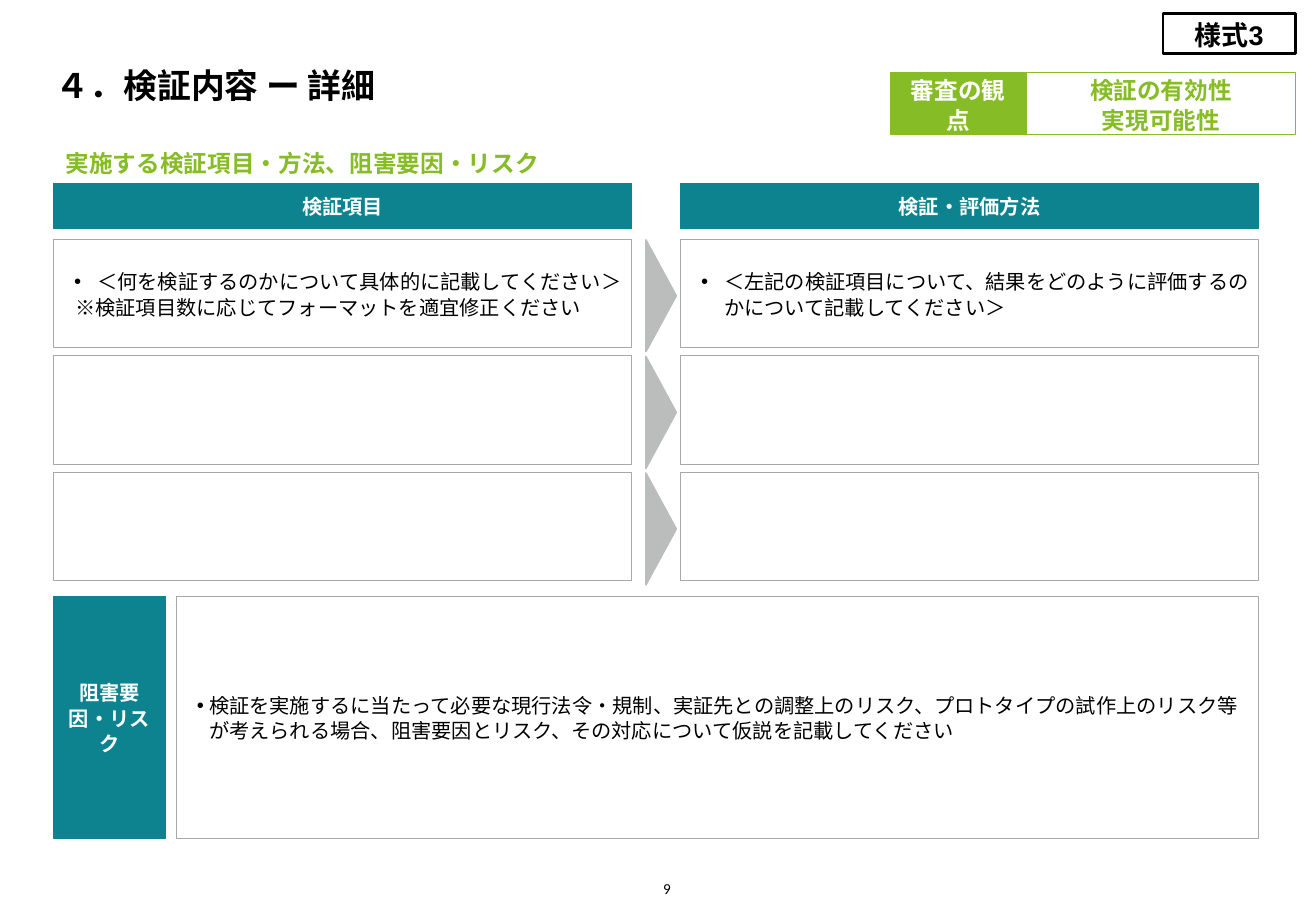
from dataclasses import dataclass
from typing import Optional

from lxml import etree
from pptx import Presentation
from pptx.dml.color import RGBColor
from pptx.enum.shapes import MSO_SHAPE
from pptx.enum.text import MSO_ANCHOR, MSO_AUTO_SIZE, PP_ALIGN
from pptx.oxml.ns import qn
from pptx.util import Inches, Pt

RECTANGLE, TRIANGLE = MSO_SHAPE.RECTANGLE, MSO_SHAPE.ISOSCELES_TRIANGLE
LEFT, CENTER, RIGHT = PP_ALIGN.LEFT, PP_ALIGN.CENTER, PP_ALIGN.RIGHT
MIDDLE, BOTTOM = MSO_ANCHOR.MIDDLE, MSO_ANCHOR.BOTTOM

BLACK = RGBColor(0x00, 0x00, 0x00)
WHITE = RGBColor(0xFF, 0xFF, 0xFF)
GREEN = RGBColor(0x86, 0xBC, 0x25)
TEAL = RGBColor(0x0D, 0x83, 0x90)
BORDER_GRAY = RGBColor(0xA7, 0xA8, 0xAA)
ARROW_GRAY = RGBColor(0xBB, 0xBC, 0xBC)

# Grid, in inches
LEFT_COLUMN, RIGHT_COLUMN, COLUMN_WIDTH = 0.44, 5.6, 4.76
FIRST_ROW, ROW_PITCH, ROW_HEIGHT = 1.97, 0.96, 0.89
RISK_TOP, RISK_HEIGHT = 4.91, 1.99


@dataclass
class Line:
    text: str
    size: float = 12
    color: RGBColor = BLACK
    bold: bool = False
    align: PP_ALIGN = LEFT
    font: str = "Arial"
    margin: float = 0
    hanging: float = 0
    spacing: Optional[float] = 1.06


@dataclass
class Box:
    left: float
    top: float
    width: float
    height: float
    fill: RGBColor
    border: RGBColor
    lines: tuple[Line, ...] = ()
    border_width: float = 0.5


def write_lines(frame, lines: tuple[Line, ...]) -> None:
    for index, line in enumerate(lines):
        paragraph = frame.paragraphs[0] if index == 0 else frame.add_paragraph()
        paragraph.text = line.text
        paragraph.alignment = line.align
        if line.spacing:
            paragraph.line_spacing = line.spacing
        properties = paragraph._p.get_or_add_pPr()
        if line.margin:
            properties.set("marL", str(Inches(line.margin)))
            properties.set("indent", str(-Inches(line.hanging)))
        if line.hanging:
            etree.SubElement(properties, qn("a:buFont")).set("typeface", "Arial")
            etree.SubElement(properties, qn("a:buChar")).set("char", "•")
        paragraph.font.name = line.font
        paragraph.font.size = Pt(line.size)
        paragraph.font.bold = line.bold
        paragraph.font.color.rgb = line.color


def set_frame(frame, anchor: MSO_ANCHOR, wrap: bool, left: float = 0, other: float = 0) -> None:
    frame.auto_size = MSO_AUTO_SIZE.NONE
    frame.word_wrap = wrap
    frame.vertical_anchor = anchor
    frame.margin_left = Inches(left)
    frame.margin_top = frame.margin_right = frame.margin_bottom = Inches(other)


def add_box(slide, box: Box, kind: MSO_SHAPE = RECTANGLE):
    shape = slide.shapes.add_shape(
        kind, Inches(box.left), Inches(box.top), Inches(box.width), Inches(box.height))
    shape.shadow.inherit = False
    shape.fill.solid()
    shape.fill.fore_color.rgb = box.fill
    shape.line.color.rgb = box.border
    shape.line.width = Pt(box.border_width)
    set_frame(shape.text_frame, MIDDLE, True, 0.08, 0.08)
    write_lines(shape.text_frame, box.lines)
    return shape


def add_label(slide, left: float, top: float, width: float, height: float,
              line: Line, anchor: MSO_ANCHOR, inset: float = 0) -> None:
    label = slide.shapes.add_textbox(Inches(left), Inches(top), Inches(width), Inches(height))
    set_frame(label.text_frame, anchor, False, inset)
    write_lines(label.text_frame, (line,))


def heading(text: str, color: RGBColor = WHITE, size: float = 12) -> Line:
    return Line(text, size, color, True, CENTER)


def add_title(slide) -> None:
    title = slide.shapes.title
    title.left, title.top = Inches(0.46), Inches(0.2)
    title.width, title.height = Inches(9.92), Inches(0.67)
    set_frame(title.text_frame, BOTTOM, True)
    write_lines(title.text_frame, (
        Line("４．検証内容 ー 詳細", 20, bold=True, font="Calibri", spacing=None),))


def main() -> None:
    presentation = Presentation()
    presentation.slide_width, presentation.slide_height = Inches(10.83), Inches(7.5)
    slide = presentation.slides.add_slide(presentation.slide_layouts[5])

    # Title, subtitle and page number
    add_title(slide)
    add_label(slide, 0.46, 1.11, 4.76, 0.47,
              Line("実施する検証項目・方法、阻害要因・リスク", 14, GREEN, True,
                   font="Calibri", spacing=None), MIDDLE, 0.08)
    add_label(slide, 5.32, 7.2, 0.2, 0.19,
              Line("9", 9, align=RIGHT, font="Calibri", spacing=None), BOTTOM)

    # Form number and review criteria
    add_box(slide, Box(9.57, 0.11, 1.09, 0.33, WHITE, BLACK,
                       (heading("様式3", BLACK, 16),), 1.5))
    add_box(slide, Box(8.45, 0.6, 2.21, 0.51, WHITE, GREEN,
                       (heading("検証の有効性", GREEN, 14), heading("実現可能性", GREEN, 14))))
    add_box(slide, Box(7.33, 0.6, 1.11, 0.51, GREEN, GREEN,
                       (heading("審査の観点", size=14),)))

    # Column headings
    for left, text in ((LEFT_COLUMN, "検証項目"), (RIGHT_COLUMN, "検証・評価方法")):
        add_box(slide, Box(left, 1.51, COLUMN_WIDTH, 0.37, TEAL, TEAL, (heading(text),)))

    # Item rows, each pointing to its evaluation method
    items = (
        Line("＜何を検証するのかについて具体的に記載してください＞", margin=0.28, hanging=0.19),
        Line("※検証項目数に応じてフォーマットを適宜修正ください", font="Calibri", margin=0.1),
    )
    methods = (
        Line("＜左記の検証項目について、結果をどのように評価するのかについて記載してください＞",
             margin=0.28, hanging=0.19),
    )
    rows = ((items, methods), ((), ()), ((), ()))
    for index, row in enumerate(rows):
        top = FIRST_ROW + index * ROW_PITCH
        for left, lines in zip((LEFT_COLUMN, RIGHT_COLUMN), row):
            add_box(slide, Box(left, top, COLUMN_WIDTH, ROW_HEIGHT, WHITE, BORDER_GRAY, lines))
        arrow = add_box(slide, Box(4.98, top + 0.34, 0.92, 0.25, ARROW_GRAY, ARROW_GRAY,
                                   border_width=1), TRIANGLE)
        arrow.rotation = 90

    # Obstacles and risks
    add_box(slide, Box(LEFT_COLUMN, RISK_TOP, 0.92, RISK_HEIGHT, TEAL, TEAL,
                       (heading("阻害要因・リスク"),)))
    risk = Line("検証を実施するに当たって必要な現行法令・規制、実証先との調整上のリスク、"
                "プロトタイプの試作上のリスク等が考えられる場合、阻害要因とリスク、"
                "その対応について仮説を記載してください", margin=0.19, hanging=0.1)
    add_box(slide, Box(1.45, RISK_TOP, 8.91, RISK_HEIGHT, WHITE, BORDER_GRAY, (risk,)))

    presentation.save("out.pptx")


if __name__ == "__main__":
    main()
